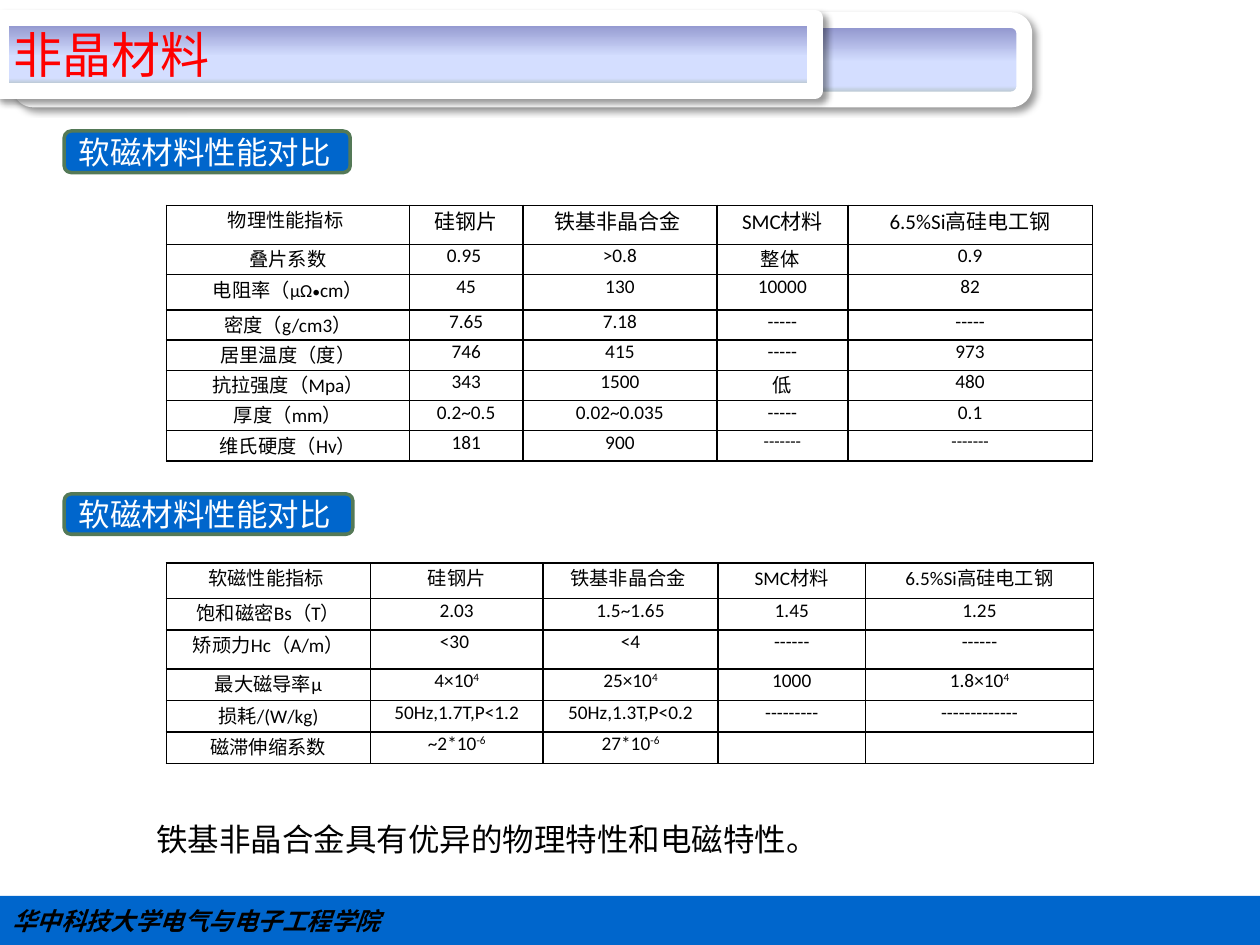
import dataclasses

import lxml.etree
import pptx
import pptx.dml.color
import pptx.enum.shapes
import pptx.enum.text
import pptx.oxml
import pptx.oxml.ns
import pptx.util

Inches = pptx.util.Inches
Pt = pptx.util.Pt
qn = pptx.oxml.ns.qn
Align = pptx.enum.text.PP_ALIGN
Anchor = pptx.enum.text.MSO_ANCHOR
Shape = pptx.enum.shapes.MSO_SHAPE


@dataclasses.dataclass(frozen=True)
class Theme:
    blue: str = "0066CC"
    green: str = "547957"
    black: str = "000000"
    white: str = "FFFFFF"
    red: str = "FF0000"
    banner_stops: tuple = ((0, "8488C4"), (53, "D4DEFF"), (83, "D4DEFF"), (100, "96AB94"))
    body_font: str = "Calibri"
    title_font: str = "Arial"
    footer_font: str = "Noto Sans CJK SC"
    title_size: float = 28
    body_size: float = 18
    footer_size: float = 14
    header_size: float = 12
    cell_size: float = 11
    dash_size: float = 10
    unit_size: float = 10.5
    dot_size: float = 9


def rgb(color):
    return pptx.dml.color.RGBColor.from_string(color)


def add_node(parent, tag, **attributes):
    return lxml.etree.SubElement(parent, qn(tag), **attributes)


class SlideBuilder:
    def __init__(self, slide, theme):
        self.slide = slide
        self.theme = theme

    def style(self, paragraph, size, color, font=None, align=Align.LEFT):
        paragraph.alignment = align
        paragraph.font.size = Pt(size)
        paragraph.font.name = font or self.theme.body_font
        paragraph.font.color.rgb = rgb(color)

    def box(self, kind, at, fill=None):
        shape = self.slide.shapes.add_shape(kind, *map(Inches, at))
        shape.shadow.inherit = False
        if fill:
            shape.fill.solid()
            shape.fill.fore_color.rgb = rgb(fill)
        return shape

    def set_text(self, shape, text, size, color, font=None, align=Align.LEFT):
        frame = shape.text_frame
        frame.word_wrap = True
        frame.vertical_anchor = Anchor.MIDDLE
        frame.text = text
        self.style(frame.paragraphs[0], size, color, font, align)
        return frame.paragraphs[0]

    def outline(self, shape, color, width):
        shape.line.color.rgb = rgb(color)
        shape.line.width = Pt(width)

    def decorate_banner(self, shape):
        properties = shape._element.spPr
        shape.fill.gradient()
        shape.fill.gradient_angle = 270
        stops = properties.find(qn("a:gradFill")).find(qn("a:gsLst"))
        for stop in list(stops):
            stops.remove(stop)
        for position, color in self.theme.banner_stops:
            stop = add_node(stops, "a:gs", pos=str(position * 1000))
            add_node(stop, "a:srgbClr", val=color)
        self.outline(shape, self.theme.white, 9)
        shape.shadow.inherit = False
        shadow = add_node(properties.find(qn("a:effectLst")), "a:outerShdw",
                          blurRad=str(Pt(4)), dist=str(Pt(3)), dir="2700000",
                          algn="tl", rotWithShape="0")
        color = add_node(shadow, "a:srgbClr", val=self.theme.black)
        add_node(color, "a:alpha", val="40000")

    def back_banner(self, at):
        self.decorate_banner(self.box(Shape.ROUNDED_RECTANGLE, at))

    def title(self, text, at):
        title = self.slide.shapes.title
        title.left, title.top, title.width, title.height = map(Inches, at)
        geometry = add_node(title._element.spPr, "a:prstGeom", prst="roundRect")
        add_node(geometry, "a:avLst")
        self.decorate_banner(title)
        self.set_text(title, text, self.theme.title_size, self.theme.red,
                      self.theme.title_font, Align.JUSTIFY)
        title.text_frame.auto_size = pptx.enum.text.MSO_AUTO_SIZE.NONE
        self.slide.shapes._spTree.append(title._element)

    def section_label(self, text, at):
        label = self.box(Shape.ROUNDED_RECTANGLE, at, self.theme.blue)
        self.outline(label, self.theme.green, 2)
        self.set_text(label, text, self.theme.body_size, self.theme.white)

    def footer(self, text, at):
        bar = self.box(Shape.RECTANGLE, at, self.theme.blue)
        bar.line.fill.background()
        paragraph = self.set_text(bar, text, self.theme.footer_size, self.theme.black,
                                  self.theme.footer_font)
        paragraph.font.bold = True
        paragraph.font.italic = True

    def conclusion(self, text, at):
        note = self.slide.shapes.add_textbox(*map(Inches, at))
        self.set_text(note, text, self.theme.body_size, self.theme.black)
        note.text_frame.vertical_anchor = Anchor.TOP

    def border(self, cell):
        properties = cell._tc.get_or_add_tcPr()
        for side in ("a:lnL", "a:lnR", "a:lnT", "a:lnB"):
            line = add_node(properties, side, w=str(Pt(1)))
            add_node(add_node(line, "a:solidFill"), "a:srgbClr", val=self.theme.black)

    def fill_cell(self, cell, content, size):
        self.border(cell)
        cell.fill.background()
        cell.margin_left = cell.margin_right = Inches(0.07)
        cell.margin_top = cell.margin_bottom = 0
        paragraph = cell.text_frame.paragraphs[0]
        self.style(paragraph, size, self.theme.black, align=Align.CENTER)
        if not content:
            paragraph._p.get_or_add_endParaRPr().set("sz", str(size * 100))
        elif isinstance(content, str):
            base, _, exponent = content.partition("^")
            paragraph.add_run().text = base
            if exponent:
                power = paragraph.add_run()
                power.text = exponent
                power._r.get_or_add_rPr().set("baseline", "30000")
        else:
            for text, run_size in content:
                run = paragraph.add_run()
                run.text = text
                run.font.size = Pt(run_size)

    def table(self, origin, widths, heights, rows, sizes):
        area = (*origin, sum(widths), sum(heights))
        table = self.slide.shapes.add_table(len(rows), len(widths), *map(Inches, area)).table
        table.first_row = table.horz_banding = False
        for column, width in zip(table.columns, widths):
            column.width = Inches(width)
        for r, (height, row) in enumerate(zip(heights, rows)):
            table.rows[r].height = Inches(height)
            for c, content in enumerate(row):
                size = sizes.get((r, c), self.theme.cell_size)
                self.fill_cell(table.cell(r, c), content, size)


def main():
    theme = Theme()
    deck = pptx.Presentation()
    deck.slide_width, deck.slide_height = Inches(10), Inches(7.5)
    builder = SlideBuilder(deck.slides.add_slide(deck.slide_layouts[5]), theme)

    materials = ["硅钢片", "铁基非晶合金 ", "SMC材料", "6.5%Si高硅电工钢"]
    resistivity = [("电阻率（", theme.cell_size), ("μΩ", theme.unit_size),
                   ("•", theme.dot_size), ("cm）", theme.cell_size)]
    physical = [
        ["物理性能指标 ", *materials],
        ["叠片系数", "0.95 ", ">0.8", "整体 ", "0.9"],
        [resistivity, "45", "130", "10000", "82"],
        ["密度（g/cm3）", "7.65", "7.18", "-----", "-----"],
        ["居里温度（度）", "746", "415", "-----", "973"],
        ["抗拉强度（Mpa）", "343", "1500", "低", "480"],
        ["厚度（mm）", "0.2~0.5", "0.02~0.035", "-----", "0.1"],
        ["维氏硬度（Hv）", "181", "900", "-------", "-------"],
    ]
    physical_sizes = {(0, c): theme.header_size for c in range(1, 5)}
    physical_sizes.update({(7, c): theme.dash_size for c in (3, 4)})
    magnetic = [
        ["软磁性能指标 ", *materials],
        ["饱和磁密Bs（T）", "2.03", "1.5~1.65", "1.45", "1.25"],
        ["矫顽力Hc（A/m）", "<30 ", "<4", "------", "------"],
        ["最大磁导率μ", "4×10^4", "25×10^4", "1000", "1.8×10^4"],
        ["损耗/(W/kg)", "50Hz,1.7T,P<1.2", "50Hz,1.3T,P<0.2", "---------", "-------------"],
        ["磁滞伸缩系数", "~2*10^-6", "27*10^-6", "", ""],
    ]

    builder.back_banner((0.16, 0.16, 7.97, 0.63))
    builder.footer("华中科技大学电气与电子工程学院", (0, 7.11, 10, 0.39))
    builder.section_label("软磁材料性能对比", (0.51, 1.04, 2.27, 0.33))
    builder.table((1.32, 1.63), (1.93, 0.9, 1.54, 1.04, 1.94),
                  (0.31, 0.24, 0.28, *[0.24] * 5), physical, physical_sizes)
    builder.title("非晶材料", (0.01, 0.14, 6.46, 0.58))
    builder.table((1.32, 4.47), (1.62, 1.37, 1.39, 1.17, 1.81),
                  (0.28, 0.25, 0.31, *[0.25] * 3), magnetic, {})
    builder.section_label("软磁材料性能对比", (0.51, 3.92, 2.29, 0.32))
    builder.conclusion("铁基非晶合金具有优异的物理特性和电磁特性。", (1.14, 6.46, 9.29, 0.4))
    deck.save("out.pptx")


if __name__ == "__main__":
    main()
